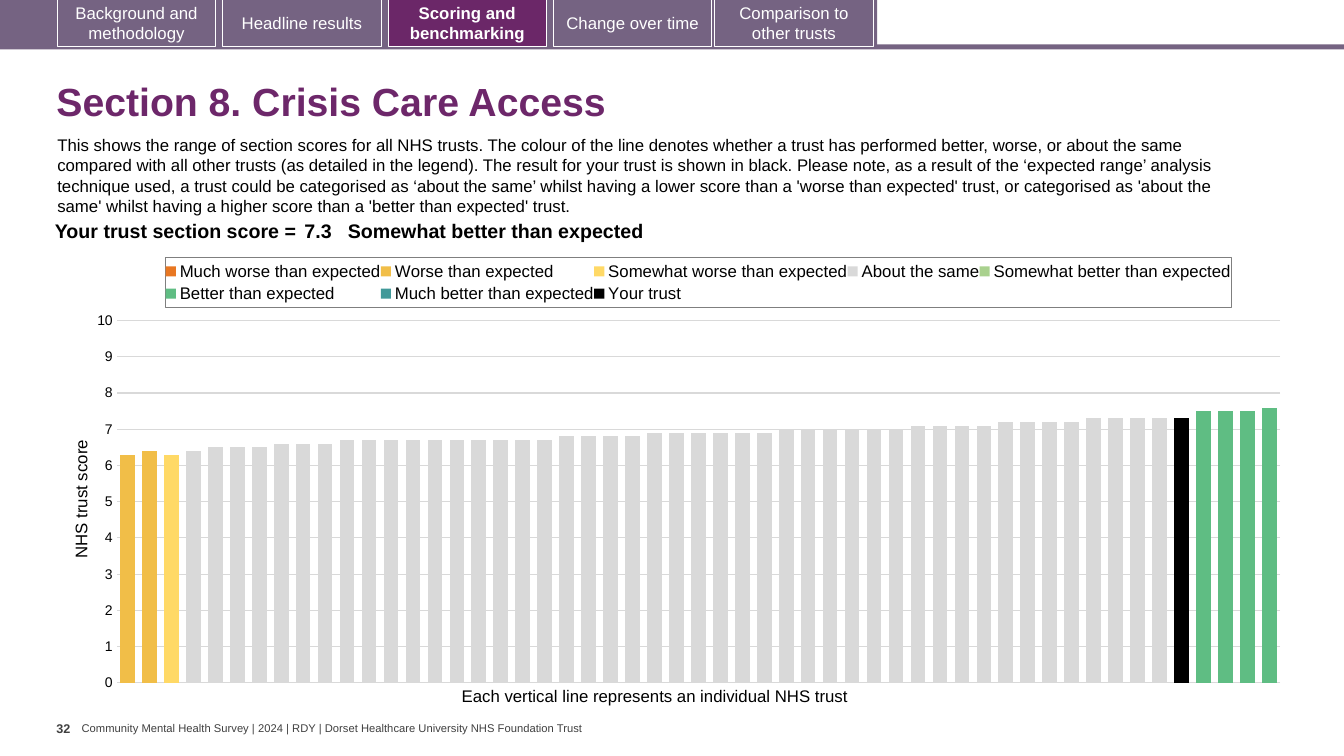
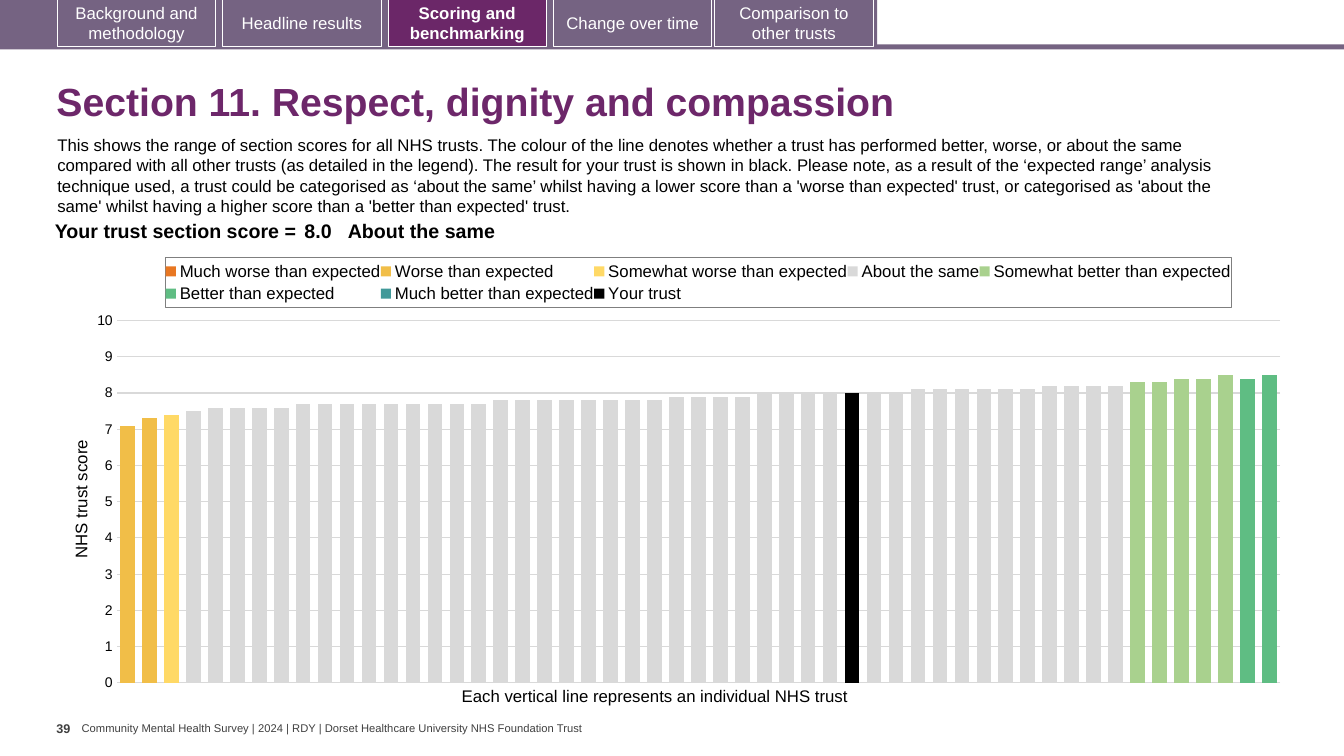
from copy import deepcopy
from itertools import chain

from pptx import Presentation
from pptx.chart.data import CategoryChartData
from pptx.dml.color import RGBColor as RGB
from pptx.enum.chart import XL_CHART_TYPE as CHART, XL_LEGEND_POSITION as LEGEND
from pptx.enum.chart import XL_TICK_MARK as TICK
from pptx.enum.shapes import MSO_SHAPE as SHAPE
from pptx.enum.text import MSO_ANCHOR as ANCHOR, PP_ALIGN as ALIGN
from pptx.oxml import parse_xml
from pptx.oxml.ns import nsdecls
from pptx.util import Inches, Pt

THEME = {
    "font": "Arial",
    "band": "756382", "active": "6B2768", "title": "6D276A",
    "text": "000000", "muted": "404040", "white": "FFFFFF",
    "grid": "D9D9D9", "border": "7F7F7F",
    "sizes": {"title": 28, "score": 14, "body": 12, "axis": 10, "page": 9, "footer": 8},
}

TABS = [
    (0.57, "Background and methodology"),
    (2.21, "Headline results"),
    (3.85, "Scoring and benchmarking"),
    (5.49, "Change over time"),
    (7.09, "Comparison to other trusts"),
]
ACTIVE_TAB = "Scoring and benchmarking"
FOOTER = "Community Mental Health Survey | 2024 | RDY | Dorset Healthcare University NHS Foundation Trust"
INTRO = (
    "This shows the range of section scores for all NHS trusts. The colour of the line denotes "
    "whether a trust has performed better, worse, or about the same compared with all other trusts "
    "(as detailed in the legend). The result for your trust is shown in black. Please note, as a "
    "result of the ‘expected range’ analysis technique used, a trust could be categorised as ‘about "
    "the same’ whilst having a lower score than a 'worse than expected' trust, or categorised as "
    "'about the same' whilst having a higher score than a 'better than expected' trust."
)
SCORE_LABEL = "Your trust section score ="
CAPTION = "Each vertical line represents an individual NHS trust"
AXIS_TITLE = "NHS trust score"
YOUR_TRUST = ("Your trust", "000000")
RATINGS = [
    ("Much worse than expected", "E87722"),
    ("Worse than expected", "F1BE48"),
    ("Somewhat worse than expected", "FFD966"),
    ("About the same", "D9D9D9"),
    ("Somewhat better than expected", "A9D18E"),
    ("Better than expected", "5FBD83"),
    ("Much better than expected", "419999"),
]

SECTIONS = [
    {
        "page": "32", "title": "Section 8. Crisis Care Access",
        "score": "7.3", "rating": "Somewhat better than expected", "rank": 49,
        "score_counts": {
            "Worse than expected": [(6.3, 1), (6.4, 1)],
            "Somewhat worse than expected": [(6.3, 1)],
            "About the same": [(6.4, 1), (6.5, 3), (6.6, 3), (6.7, 10), (6.8, 4), (6.9, 6),
                               (7, 6), (7.1, 4), (7.2, 4), (7.3, 4)],
            "Somewhat better than expected": [(7.3, 1)],
            "Better than expected": [(7.5, 3), (7.6, 1)],
        },
    },
    {
        "page": "39", "title": "Section 11. Respect, dignity and compassion",
        "score": "8.0", "rating": "About the same", "rank": 34,
        "score_counts": {
            "Worse than expected": [(7.1, 1), (7.3, 1)],
            "Somewhat worse than expected": [(7.4, 1)],
            "About the same": [(7.5, 1), (7.6, 4), (7.7, 9), (7.8, 8), (7.9, 4), (8, 7),
                               (8.1, 6), (8.2, 4)],
            "Somewhat better than expected": [(8.3, 2), (8.4, 2), (8.5, 1)],
            "Better than expected": [(8.4, 1), (8.5, 1)],
        },
    },
]


def apply(target, **values):
    for name, value in values.items():
        setattr(target, name, value)


def box(left, top, width, height):
    return [Inches(length) for length in (left, top, width, height)]


def style_font(font, size, color="text", bold=False):
    apply(font, name=THEME["font"], size=Pt(THEME["sizes"][size]), bold=bold)
    font.color.rgb = RGB.from_string(THEME[color])


def write(frame, text, size, color="text", bold=False, align=ALIGN.LEFT):
    frame.text = text
    paragraph = frame.paragraphs[0]
    paragraph.alignment = align
    style_font(paragraph.font, size, color, bold)
    return paragraph


def add_text(slide, area, text, size, color="text", bold=False, insets=(0.1, 0.05),
             anchor=ANCHOR.TOP):
    shape = slide.shapes.add_textbox(*box(*area))
    side, end = (Inches(inset) for inset in insets)
    apply(shape.text_frame, word_wrap=True, vertical_anchor=anchor, margin_left=side,
          margin_right=side, margin_top=end, margin_bottom=end)
    write(shape.text_frame, text, size, color, bold)
    return shape


def add_block(slide, area, color, outlined=False):
    shape = slide.shapes.add_shape(SHAPE.RECTANGLE, *box(*area))
    shape.shadow.inherit = False
    shape.fill.solid()
    shape.fill.fore_color.rgb = RGB.from_string(THEME[color])
    if outlined:
        shape.line.color.rgb = RGB.from_string(THEME["white"])
        shape.line.width = Pt(0.75)
    else:
        shape.line.fill.background()
    return shape


def draw_shared_parts(slide):
    parts = [
        add_text(slide, (0.81, 7.16, 5.03, 0.13), FOOTER, "footer", "muted",
                 insets=(0, 0), anchor=ANCHOR.MIDDLE),
        add_block(slide, (0, 0.44, 13.33, 0.05), "band"),
        add_block(slide, (0, 0, 8.7, 0.47), "band"),
    ]
    for left, label in TABS:
        active = label == ACTIVE_TAB
        tab = add_block(slide, (left, -0.01, 1.57, 0.47), "active" if active else "band", True)
        apply(tab.text_frame, word_wrap=True, vertical_anchor=ANCHOR.MIDDLE)
        write(tab.text_frame, label, "body", "white", active, ALIGN.CENTER)
        parts.append(tab)
    return parts


def prepare_layout(layout):
    title, *others = layout.placeholders
    for placeholder in others:
        layout.shapes.element.remove(placeholder.element)
    left, top, width, height = box(0.46, 0.67, 12.49, 0.72)
    apply(title, left=left, top=top, width=width, height=height)


def ranked_series(section):
    total = sum(count for pairs in section["score_counts"].values() for _, count in pairs)
    start = 0
    series = []
    for name, _ in RATINGS:
        pairs = section["score_counts"].get(name, [])
        scores = list(chain.from_iterable([score] * count for score, count in pairs))
        series.append((name, [None] * start + scores + [None] * (total - start - len(scores))))
        start += len(scores)
    own = [None] * total
    own[section["rank"] - 1] = float(section["score"])
    return total, series + [(YOUR_TRUST[0], own)]


def manual_layout(target=None, **places):
    modes = [f'<c:{axis}Mode val="edge"/>' for axis in "xy"]
    inner = '<c:layoutTarget val="inner"/>' if target else ""
    sizes = [f'<c:{name} val="{value}"/>' for name, value in places.items()]
    return parse_xml(f'<c:layout {nsdecls("c")}><c:manualLayout>{inner}'
                     f'{"".join(modes + sizes)}</c:manualLayout></c:layout>')


def place(element, layout, before):
    for old in element.xpath("./c:layout"):
        element.remove(old)
    element.xpath(f"./c:{before}")[0].addprevious(layout)


def move_own_bar_to_second_axis(plot_area):
    bars = plot_area.xpath("./c:barChart")[0]
    own_bars = deepcopy(bars)
    bars.remove(bars.xpath("./c:ser")[-1])
    for series in own_bars.xpath("./c:ser")[:-1]:
        own_bars.remove(series)
    bars.addnext(own_bars)
    category, value = (deepcopy(plot_area.xpath(f"./c:{kind}")[0]) for kind in ("catAx", "valAx"))
    for extra in value.xpath("./c:majorGridlines | ./c:title"):
        value.remove(extra)
    settings = [
        (category, "axId", "5001"), (category, "crossAx", "5002"),
        (value, "axId", "5002"), (value, "crossAx", "5001"), (value, "axPos", "r"),
        (value, "crosses", "max"), (value, "tickLblPos", "none"),
    ]
    for axis, tag, setting in settings:
        axis.xpath(f"./c:{tag}")[0].set("val", setting)
    for reference, number in zip(own_bars.xpath("./c:axId"), ("5001", "5002")):
        reference.set("val", number)
    last_axis = plot_area.xpath("./c:valAx")[0]
    last_axis.addnext(category)
    category.addnext(value)


def add_score_chart(slide, section):
    total, series = ranked_series(section)
    data = CategoryChartData(number_format="0.0")
    data.categories = [str(rank) for rank in range(1, total + 1)]
    for name, scores in series:
        data.add_series(name, scores)
    chart = slide.shapes.add_chart(CHART.COLUMN_CLUSTERED, *box(0.67, 2.47, 12.15, 4.44), data).chart
    apply(chart, has_title=False, has_legend=True)
    style_font(chart.font, "axis")
    apply(chart.plots[0], gap_width=50, overlap=100, vary_by_categories=False)
    for bars, (_, color) in zip(chart.plots[0].series, RATINGS + [YOUR_TRUST]):
        bars.format.fill.solid()
        bars.format.fill.fore_color.rgb = RGB.from_string(color)

    chart.category_axis.visible = False
    axis = chart.value_axis
    apply(axis, minimum_scale=0, maximum_scale=10, major_unit=1, has_major_gridlines=True,
          major_tick_mark=TICK.NONE, minor_tick_mark=TICK.NONE)
    apply(axis.tick_labels, number_format="0", number_format_is_linked=False)
    style_font(axis.tick_labels.font, "axis")
    axis.format.line.fill.background()
    axis.major_gridlines.format.line.color.rgb = RGB.from_string(THEME["grid"])
    axis.major_gridlines.format.line.width = Pt(0.75)
    write(axis.axis_title.text_frame, AXIS_TITLE, "body", align=ALIGN.CENTER)

    apply(chart.legend, position=LEGEND.TOP, include_in_layout=False)
    style_font(chart.legend.font, "body")
    legend = chart.element.xpath(".//c:legend")[0]
    place(legend, manual_layout(x=0.08, y=0.02, w=0.87, h=0.11), "overlay")
    legend.xpath("./c:txPr")[0].addprevious(parse_xml(
        f'<c:spPr {nsdecls("c", "a")}><a:ln w="9525"><a:solidFill>'
        f'<a:srgbClr val="{THEME["border"]}"/></a:solidFill></a:ln></c:spPr>'))
    place(chart.element.xpath(".//c:valAx/c:title")[0], manual_layout(x=0, y=0.42), "overlay")
    plot_area = chart.element.xpath(".//c:plotArea")[0]
    place(plot_area, manual_layout("inner", x=0.04, y=0.16, w=0.95, h=0.81), "barChart")
    move_own_bar_to_second_axis(plot_area)


def add_score_row(slide, section):
    table = slide.shapes.add_table(1, 3, *box(0.35, 2.15, 11.69, 0.31)).table
    apply(table, first_row=False, horz_banding=False)
    columns = [
        (2.63, SCORE_LABEL, 0.04, ALIGN.RIGHT),
        (0.47, section["score"], 0.04, ALIGN.LEFT),
        (8.59, section["rating"], 0, ALIGN.LEFT),
    ]
    for index, (width, text, side, align) in enumerate(columns):
        table.columns[index].width = Inches(width)
        cell = table.cell(0, index)
        cell.fill.background()
        apply(cell, margin_left=Inches(side), margin_right=Inches(side),
              margin_top=Inches(0.04), margin_bottom=Inches(0.04))
        write(cell.text_frame, text, "score", bold=True, align=align)


def add_section(slide, section):
    title = slide.shapes.title.text_frame
    title.vertical_anchor = ANCHOR.MIDDLE
    write(title, section["title"], "title", "title", True).line_spacing = 0.9
    add_text(slide, (0.56, 7.1, 0.25, 0.4), section["page"], "page", "muted", True, (0, 0.05))
    add_text(slide, (0.47, 1.29, 12.13, 0.91), INTRO, "body")
    add_text(slide, (4.48, 6.75, 4.11, 0.3), CAPTION, "body")
    add_score_chart(slide, section)
    add_score_row(slide, section)


def main():
    presentation = Presentation()
    apply(presentation, slide_width=Inches(13.33), slide_height=Inches(7.5))
    layout = presentation.slide_layouts[5]
    prepare_layout(layout)
    slides = [presentation.slides.add_slide(layout) for _ in SECTIONS]
    for shape in draw_shared_parts(slides[0]):
        layout.shapes.element.append(shape.element)
    for slide, section in zip(slides, SECTIONS):
        add_section(slide, section)
    presentation.save("out.pptx")


if __name__ == "__main__":
    main()
